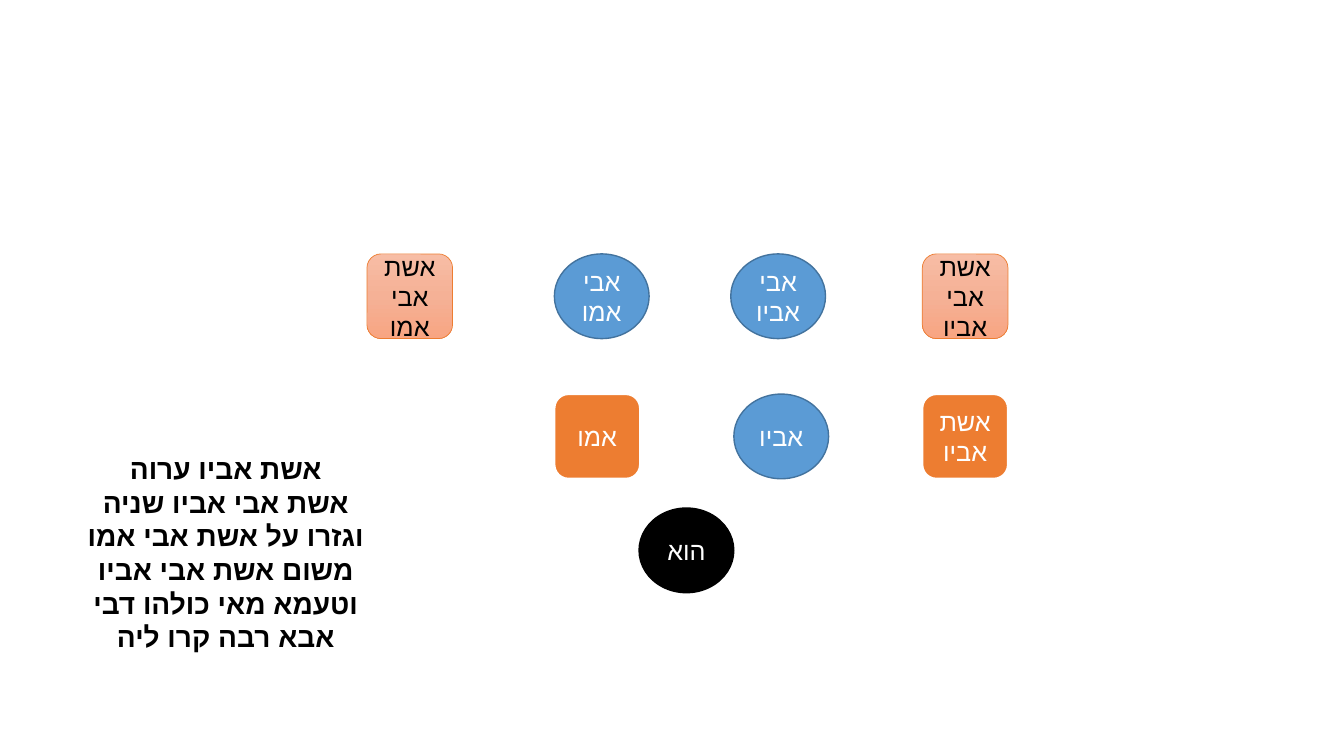
"""Build a slide of a family diagram with the rulings on the wives of the forefathers."""
from copy import deepcopy

from lxml.etree import SubElement
from pptx import Presentation
from pptx.dml.color import RGBColor
from pptx.enum.shapes import MSO_SHAPE as Preset
from pptx.enum.text import MSO_ANCHOR as Anchor, MSO_AUTO_SIZE as AutoSize, PP_ALIGN as Align
from pptx.oxml.ns import qn
from pptx.util import Pt

FONT = "Arial"
COLORS = {
    "black": "000000",
    "white": "FFFFFF",
    "blue": "5B9BD5",
    "blue_edge": "43739E",
    "orange": "ED7D31",
}
PEACH_STOPS = ((0, "F7BDA5"), (0.5, "F5B196"), (1, "F8A582"))
NODE_HEIGHT = 60.5
STYLES = {
    "self": dict(preset=Preset.OVAL, width=67.7, fill="black", edge="black", weight=1, color="white"),
    "man": dict(preset=Preset.OVAL, width=67.7, fill="blue", edge="blue_edge", weight=1, color="white"),
    "woman": dict(preset=Preset.ROUNDED_RECTANGLE, width=61.2, fill="orange", edge="white",
                  weight=1.5, color="white"),
    "secondary": dict(preset=Preset.ROUNDED_RECTANGLE, width=61.2, fill=None, edge="orange",
                      weight=0.5, color="black"),
}
GRANDPARENTS_TOP, PARENTS_TOP, SELF_TOP = 181.4, 281.5, 362.9
PEOPLE = (
    ("הוא", "self", 456.5, SELF_TOP),
    ("אביו", "man", 524.2, PARENTS_TOP),
    ("אמו", "woman", 396, PARENTS_TOP),
    ("אבי אביו", "man", 522, GRANDPARENTS_TOP),
    ("אשת אביו", "woman", 658.8, PARENTS_TOP),
    ("אשת אבי אביו", "secondary", 658.8, GRANDPARENTS_TOP),
    ("אשת אבי אמו", "secondary", 262.1, GRANDPARENTS_TOP),
    ("אבי אמו", "man", 396, GRANDPARENTS_TOP),
)
RULINGS = (
    "אשת אביו ערוה",
    "אשת אבי אביו שניה",
    "וגזרו על אשת אבי אמו משום אשת אבי אביו",
    "וטעמא מאי כולהו דבי אבא רבה קרו ליה",
)


def rgb(name):
    """Return the named colour."""
    return RGBColor.from_string(COLORS[name])


def write_text(paragraph, text, size=18, color="black", bold=False):
    """Write centred right-to-left text into a paragraph."""
    paragraph.alignment = Align.CENTER
    paragraph._p.get_or_add_pPr().set("rtl", "1")
    run = paragraph.add_run()
    run.text = text
    run.font.name = FONT
    run.font.size = Pt(size)
    run.font.bold = bold
    run.font.color.rgb = rgb(color)
    SubElement(run._r.get_or_add_rPr(), qn("a:cs")).set("typeface", FONT)


def fill_peach(shape):
    """Fill a shape with the three-stop peach gradient, from top to bottom."""
    shape.fill.gradient()
    shape.fill.gradient_angle = 270
    stop_list = shape._element.spPr.find(qn("a:gradFill")).find(qn("a:gsLst"))
    stop_list.insert(1, deepcopy(stop_list[0]))
    for stop, (position, color) in zip(shape.fill.gradient_stops, PEACH_STOPS):
        stop.position = position
        stop.color.rgb = RGBColor.from_string(color)


def add_person(slide, text, kind, left, top):
    """Add one member of the family in the style of its kind."""
    style = STYLES[kind]
    shape = slide.shapes.add_shape(
        style["preset"], Pt(left), Pt(top), Pt(style["width"]), Pt(NODE_HEIGHT))
    shape.shadow.inherit = False
    if style["fill"]:
        shape.fill.solid()
        shape.fill.fore_color.rgb = rgb(style["fill"])
    else:
        fill_peach(shape)
    shape.line.color.rgb = rgb(style["edge"])
    shape.line.width = Pt(style["weight"])
    shape.text_frame.word_wrap = True
    shape.text_frame.vertical_anchor = Anchor.MIDDLE
    write_text(shape.text_frame.paragraphs[0], text, color=style["color"])


def add_rulings(slide, lines, left, top, width, height):
    """Add the bold text box, one paragraph for each ruling."""
    frame = slide.shapes.add_textbox(Pt(left), Pt(top), Pt(width), Pt(height)).text_frame
    frame.word_wrap = True
    frame.auto_size = AutoSize.SHAPE_TO_FIT_TEXT
    for index, line in enumerate(lines):
        paragraph = frame.add_paragraph() if index else frame.paragraphs[0]
        write_text(paragraph, line, size=20, bold=True)


def main():
    """Build and save the presentation."""
    presentation = Presentation()
    presentation.slide_width, presentation.slide_height = Pt(960), Pt(540)
    slide = presentation.slides.add_slide(presentation.slide_layouts[6])
    for person in PEOPLE:
        add_person(slide, *person)
    add_rulings(slide, RULINGS, left=47.5, top=319, width=227.5, height=152.6)
    presentation.save("out.pptx")


if __name__ == "__main__":
    main()
